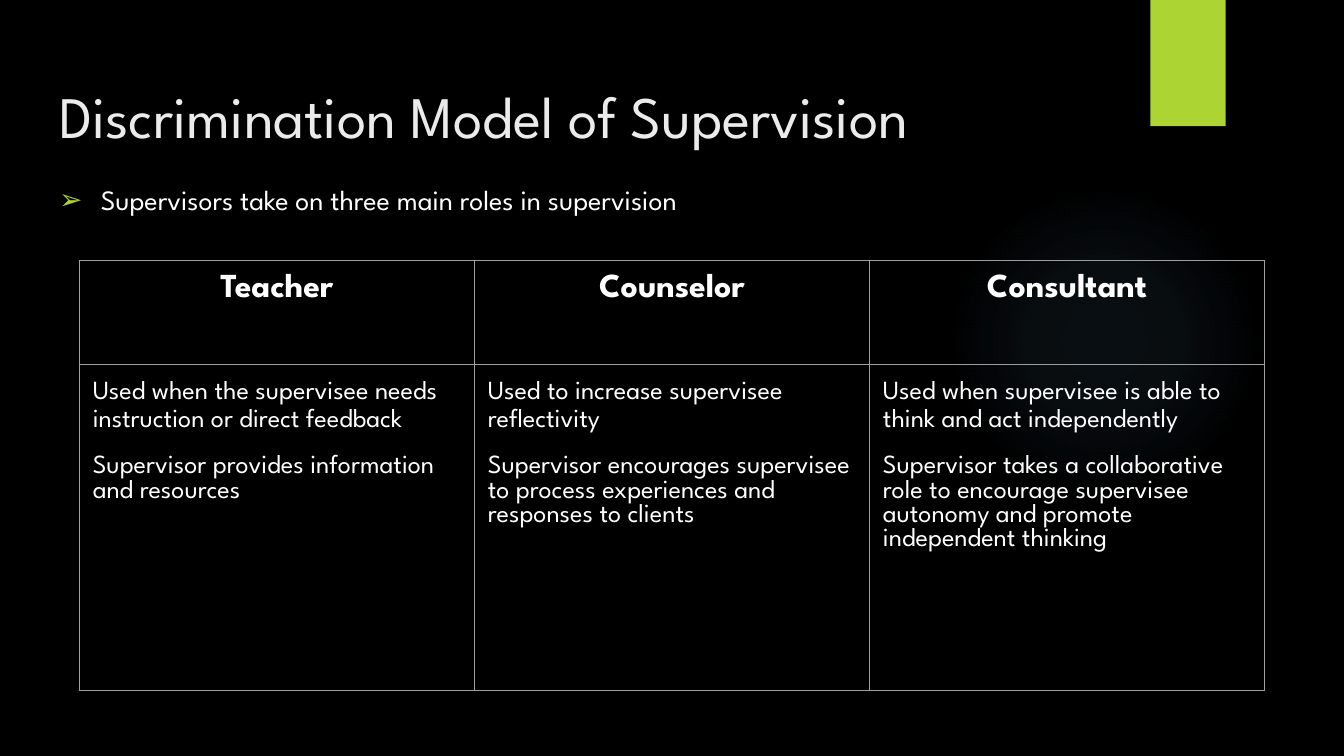
from lxml import etree
from pptx import Presentation
from pptx.dml.color import RGBColor
from pptx.enum.shapes import MSO_SHAPE
from pptx.enum.text import MSO_ANCHOR, MSO_AUTO_SIZE, PP_ALIGN
from pptx.oxml import parse_xml
from pptx.oxml.ns import nsdecls, qn
from pptx.util import Inches, Pt

RECTANGLE, OVAL = MSO_SHAPE.RECTANGLE, MSO_SHAPE.OVAL
LEFT, CENTER = PP_ALIGN.LEFT, PP_ALIGN.CENTER
TOP, BOTTOM = MSO_ANCHOR.TOP, MSO_ANCHOR.BOTTOM
NO_AUTOFIT = MSO_AUTO_SIZE.NONE

FONT = "League Spartan"
COLORS = {
    "background": "000000",
    "title": "EBEBEB",
    "text": "FFFFFF",
    "accent": "ACD433",
    "glow": "7AC4F0",
    "border": "9E9E9E",
}
ROLES = {
    "Teacher": (
        "Used when the supervisee needs instruction or direct feedback",
        "Supervisor provides information and resources",
    ),
    "Counselor": (
        "Used to increase supervisee reflectivity",
        "Supervisor encourages supervisee to process experiences and responses to clients",
    ),
    "Consultant": (
        "Used when supervisee is able to think and act independently",
        "Supervisor takes a collaborative role to encourage supervisee autonomy "
        "and promote independent thinking",
    ),
}


class SlideBuilder:
    """Holds the style and the current slide."""

    def __init__(self, deck):
        self.slide = deck.slides.add_slide(deck.slide_layouts[1])
        fill = self.slide.background.fill
        fill.solid()
        fill.fore_color.rgb = self.color("background")

    def color(self, name):
        return RGBColor.from_string(COLORS[name])

    def style(self, para, size, color="text", bold=False, align=LEFT):
        para.alignment = align
        font = para.font
        font.name, font.size, font.bold = FONT, Pt(size), bold
        font.color.rgb = self.color(color)

    def shape(self, kind, left, top, width, height):
        shape = self.slide.shapes.add_shape(
            kind, Inches(left), Inches(top), Inches(width), Inches(height))
        shape.shadow.inherit = False
        shape.line.fill.background()
        return shape

    def block(self, kind, left, top, width, height, color):
        fill = self.shape(kind, left, top, width, height).fill
        fill.solid()
        fill.fore_color.rgb = self.color(color)

    def glow(self, left, top, size, stops):
        properties = self.shape(OVAL, left, top, size, size).element.spPr
        stop_xml = "".join(
            f'<a:gs pos="{position * 1000}"><a:srgbClr val="{COLORS["glow"]}">'
            f'<a:alpha val="{opacity * 1000}"/></a:srgbClr></a:gs>'
            for position, opacity in stops)
        gradient = parse_xml(
            f'<a:gradFill {nsdecls("a")}><a:gsLst>{stop_xml}</a:gsLst>'
            '<a:path path="circle"><a:fillToRect l="50000" t="50000" r="50000" b="50000"/>'
            '</a:path></a:gradFill>')
        properties.find(qn("a:prstGeom")).addnext(gradient)

    def placeholder(self, box, left, top, width, height, text, anchor):
        box.left, box.top = Inches(left), Inches(top)
        box.width, box.height = Inches(width), Inches(height)
        frame = box.text_frame
        frame.auto_size, frame.word_wrap = NO_AUTOFIT, True
        frame.vertical_anchor = anchor
        frame.margin_left = frame.margin_right = Inches(0.1)
        frame.margin_top = frame.margin_bottom = Inches(0.1)
        frame.text = text
        return frame

    def title(self, text, left, top, width, height):
        frame = self.placeholder(self.slide.shapes.title, left, top, width, height, text, BOTTOM)
        frame.margin_bottom = 0
        self.style(frame.paragraphs[0], 31.5, "title")

    def bullet(self, text, left, top, width, height):
        box = self.slide.placeholders[1]
        para = self.placeholder(box, left, top, width, height, text, TOP).paragraphs[0]
        para.space_before, para.space_after = Pt(0), Pt(16)
        properties = para._p.get_or_add_pPr()
        properties.set("marL", str(Inches(0.31)))
        properties.set("indent", str(-Inches(0.31)))
        color = etree.SubElement(properties, qn("a:buClr"))
        etree.SubElement(color, qn("a:srgbClr"), val=COLORS["accent"])
        etree.SubElement(properties, qn("a:buChar"), char="➢")
        self.style(para, 15)

    def cell(self, cell, texts):
        cell.fill.background()
        cell.margin_left = cell.margin_right = Inches(0.1)
        cell.margin_top = cell.margin_bottom = Inches(0.1)
        cell.text = "\n".join(texts)
        properties = cell._tc.get_or_add_tcPr()
        for position, side in enumerate(("lnL", "lnR", "lnT", "lnB")):
            properties.insert(position, parse_xml(
                f'<a:{side} {nsdecls("a")} w="{Pt(0.75)}"><a:solidFill>'
                f'<a:srgbClr val="{COLORS["border"]}"/></a:solidFill></a:{side}>'))
        return cell.text_frame.paragraphs

    def table(self, roles, left, top, width, heights):
        table = self.slide.shapes.add_table(
            len(heights), len(roles), Inches(left), Inches(top),
            Inches(width), Inches(sum(heights))).table
        table.first_row = table.horz_banding = False
        for row, height in zip(table.rows, heights):
            row.height = Inches(height)
        for column, (role, notes) in enumerate(roles.items()):
            table.columns[column].width = Inches(width / len(roles))
            heading = self.cell(table.cell(0, column), [role])[0]
            self.style(heading, 18, bold=True, align=CENTER)
            use, action = self.cell(table.cell(1, column), notes)
            use.line_spacing = 1.15
            action.space_before = Pt(12)
            for para in (use, action):
                self.style(para, 14)


def main():
    deck = Presentation()
    # Widescreen, 16:9
    deck.slide_width = Inches(10)
    deck.slide_height = Inches(10 * 9 / 16)
    page = SlideBuilder(deck)

    # Backdrop: soft glow and accent tab
    page.glow(7.06, 1.38, 2.31, [(0, 7), (36, 6), (69, 0)])
    page.block(RECTANGLE, 8.56, 0, 0.56, 0.94, "accent")

    # Title and lead bullet
    page.title("Discrimination Model of Supervision", 0.34, 0.49, 9.32, 0.63)
    page.bullet("Supervisors take on three main roles in supervision", 0.34, 1.26, 9.32, 3.74)

    # Table of the three roles
    page.table(ROLES, 0.59, 1.94, 8.82, [0.77, 2.43])

    deck.save("out.pptx")


if __name__ == "__main__":
    main()
